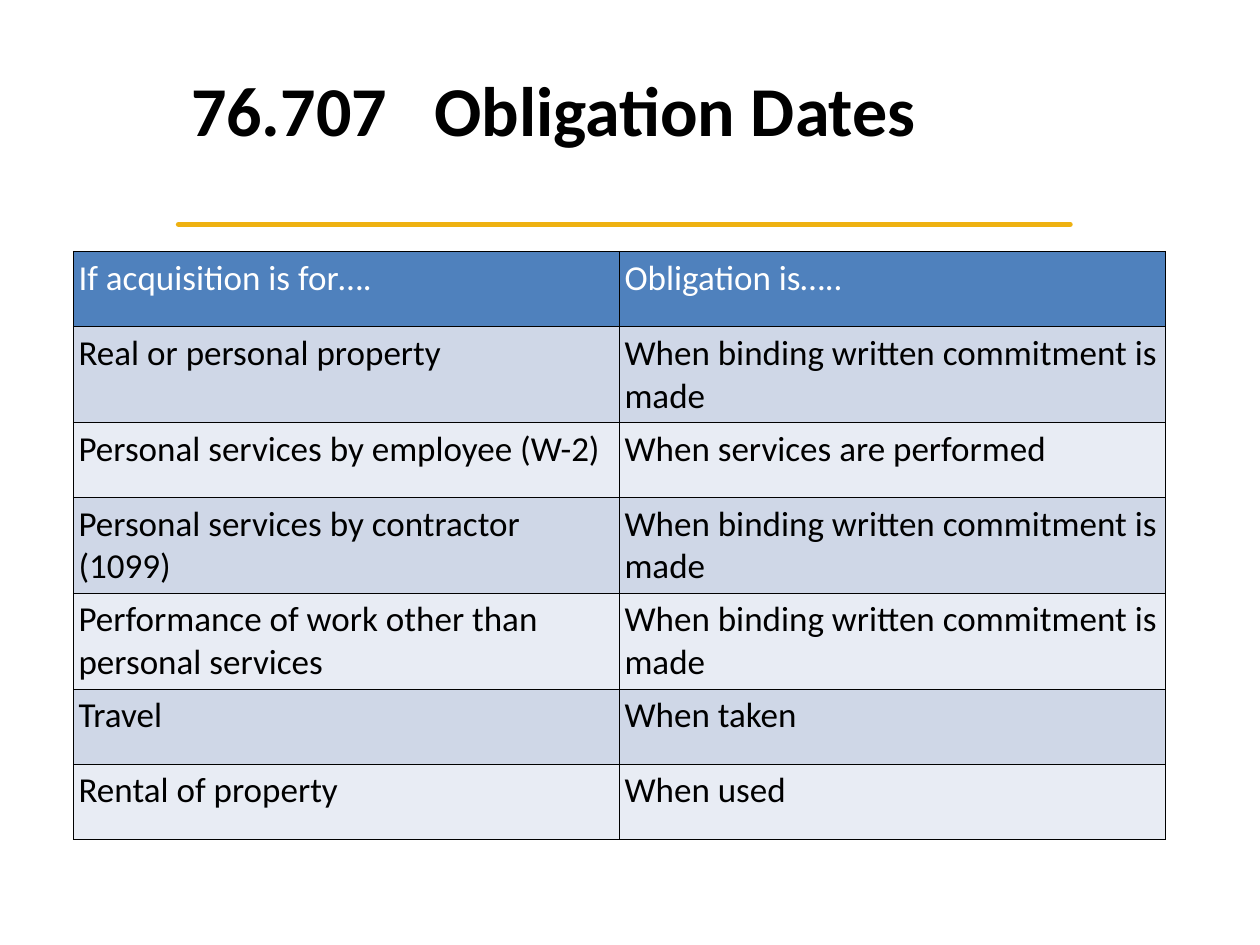
from dataclasses import dataclass

from lxml import etree
from pptx import Presentation
from pptx import util as u
from pptx.dml import color
from pptx.enum import shapes, text
from pptx.oxml import ns

FONT = "Calibri"
BLACK = "000000"
WHITE = "FFFFFF"
HEADER = "4F81BD"
BANDS = ("CFD7E7", "E8ECF4")
GOLD = "EEB111"
COMMITMENT = "When binding written commitment is made"


@dataclass(frozen=True)
class Rule:
    acquisition: str
    obligation: str


RULES = [
    Rule("If acquisition is for….", "Obligation is….."),
    Rule("Real or personal property", COMMITMENT),
    Rule("Personal services by employee (W-2)", "When services are performed"),
    Rule("Personal services by contractor (1099)", COMMITMENT),
    Rule("Performance of work other than personal services", COMMITMENT),
    Rule("Travel", "When taken"),
    Rule("Rental of property", "When used"),
]


def rgb(value: str) -> color.RGBColor:
    return color.RGBColor.from_string(value)


def write(frame, words: str, *, size: float, fill: str, bold: bool = False,
          spacing: float = 1.0) -> None:
    para = frame.paragraphs[0]
    para.alignment = text.PP_ALIGN.LEFT
    para.line_spacing = spacing
    span = para.add_run()
    span.text = words
    span.font.name = FONT
    span.font.size = u.Pt(size)
    span.font.bold = bold
    span.font.color.rgb = rgb(fill)


def add_border(cell) -> None:
    properties = cell._tc.get_or_add_tcPr()
    for index, side in enumerate(("lnL", "lnR", "lnT", "lnB")):
        line = etree.Element(ns.qn(f"a:{side}"), w=str(u.Pt(1)))
        solid = etree.SubElement(line, ns.qn("a:solidFill"))
        etree.SubElement(solid, ns.qn("a:srgbClr"), val=BLACK)
        properties.insert(index, line)


def draw_title(page, words: str) -> None:
    box = page.shapes.title
    box.left, box.top, box.width, box.height = (
        u.Pt(102), u.Pt(13), u.Pt(579.6), u.Pt(104.4))
    box.text_frame.word_wrap = True
    box.text_frame.vertical_anchor = text.MSO_ANCHOR.MIDDLE
    write(box.text_frame, words, size=40, fill=BLACK, bold=True, spacing=0.9)


def draw_divider(page) -> None:
    line = page.shapes.add_connector(
        shapes.MSO_CONNECTOR.STRAIGHT, u.Pt(102), u.Pt(128.2), u.Pt(611.5), u.Pt(128.2))
    line.line.color.rgb = rgb(GOLD)
    line.line.width = u.Pt(3)
    line.line._get_or_add_ln().set("cap", "rnd")
    etree.SubElement(line._element.spPr, ns.qn("a:effectLst"))


def draw_table(page, rules: list[Rule]) -> None:
    row_height = u.Pt(42.9)
    table = page.shapes.add_table(
        len(rules), 2, u.Pt(42), u.Pt(143.8), u.Pt(624), row_height * len(rules)).table
    for row, rule in enumerate(rules):
        table.rows[row].height = row_height
        fill = BANDS[(row - 1) % 2] if row else HEADER
        for column, words in enumerate((rule.acquisition, rule.obligation)):
            cell = table.cell(row, column)
            cell.margin_left = cell.margin_right = u.Pt(2.9)
            cell.margin_top = cell.margin_bottom = u.Pt(2.9)
            cell.fill.solid()
            cell.fill.fore_color.rgb = rgb(fill)
            add_border(cell)
            write(cell.text_frame, words, size=20, fill=BLACK if row else WHITE)


def main() -> None:
    deck = Presentation()
    deck.slide_width, deck.slide_height = u.Pt(720), u.Pt(540)
    page = deck.slides.add_slide(deck.slide_layouts[5])
    draw_divider(page)
    draw_title(page, "76.707   Obligation Dates")
    draw_table(page, RULES)
    deck.save("out.pptx")


if __name__ == "__main__":
    main()
